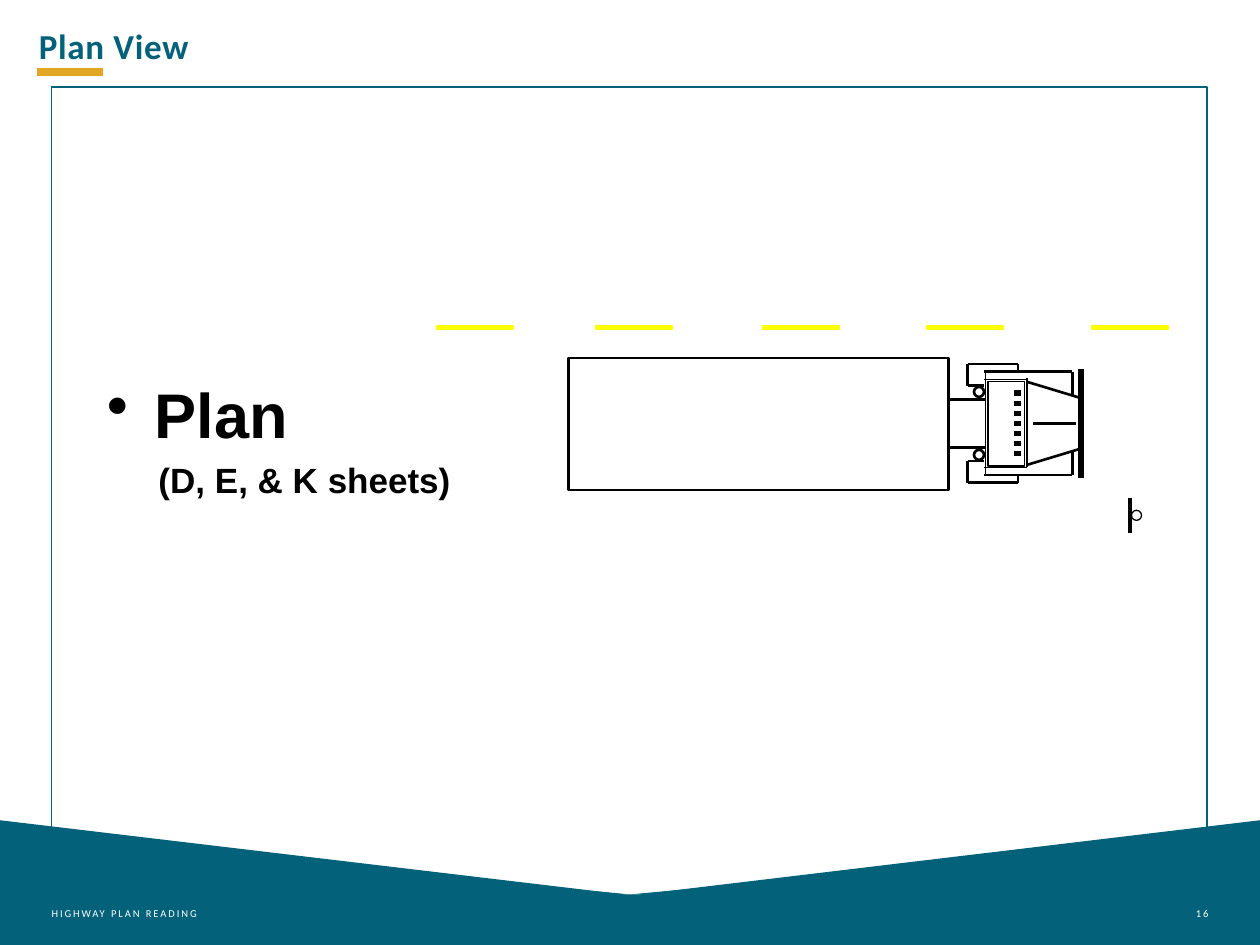
"""Builds the Plan View slide: a truck seen from above on a marked lane."""
from lxml.etree import SubElement
from pptx import Presentation
from pptx.dml.color import RGBColor as Rgb
from pptx.enum.shapes import MSO_CONNECTOR as Conn, MSO_SHAPE as Shape
from pptx.enum.text import MSO_ANCHOR as Anchor, PP_ALIGN as Align
from pptx.oxml.ns import qn
from pptx.util import Inches, Pt

THEME = {
    "teal": Rgb.from_string("03617A"), "gold": Rgb.from_string("E0A624"),
    "lane": Rgb.from_string("FFFF00"), "ink": Rgb.from_string("000000"),
    "white": Rgb.from_string("FFFFFF"),
    "foot": {"name": "Calibri", "size": Pt(6)},
    "title": {"name": "Calibri", "size": Pt(20), "bold": True},
    "note": {"name": "Arial", "size": Pt(20), "bold": True},
    "point": {"name": "Arial", "size": Pt(36), "bold": True},
}
FLUSH = {"margin_left": 0, "margin_right": 0, "vertical_anchor": Anchor.BOTTOM}
TEXTS = [
    {"text": "HIGHWAY PLAN READING", "at": (0.41, 6.95, 2.67, 0.4), "font": "foot",
     "color": "white", "gap": 110, "frame": FLUSH},
    {"text": "16", "at": (8.62, 6.95, 0.97, 0.4), "font": "foot", "color": "white",
     "gap": 110, "frame": FLUSH, "para": {"alignment": Align.RIGHT}},
    {"text": "Plan View", "at": (0.21, 0.11, 7.54, 0.47), "font": "title",
     "color": "teal", "gap": 40, "frame": {"vertical_anchor": Anchor.BOTTOM},
     "para": {"line_spacing": 0.9}},
    {"text": "(D, E, & K sheets)", "at": (1.16, 3.59, 2.54, 0.44), "font": "note",
     "color": "ink", "frame": {"word_wrap": False}},
    {"text": "Plan", "at": (0.75, 2.93, 8.5, 0.7), "font": "point", "color": "ink",
     "bullet": "•"},
]
BANDS = [
    [(10, 6.51), (10, 7.5), (0, 7.5), (0, 6.51), (4.96, 7.1), (5.07, 7.1)],
    [(0, 7.11), (5.01, 7.1), (0, 6.65)],
    [(10, 7.11), (4.99, 7.1), (10, 6.65)],
]
AXIS = 3.36
HALF = [
    (7.81, 3.01, 8.15, 3.01, 0.75), (8.15, 3.03, 8.58, 3.16, 1.5),
    (7.81, 2.95, 8.51, 2.95, 1.5), (8.51, 2.95, 8.51, 3.14, 1.5),
    (8.58, AXIS, 8.58, 2.93, 3), (7.68, 2.89, 8.08, 2.89, 1.5),
    (7.68, 2.89, 7.68, 3.06, 1.5), (7.68, 3.06, 7.81, 3.06, 1.5),
    (8.08, 2.89, 8.08, 2.94, 1.5), (7.82, 3.17, 7.53, 3.17, 1.5),
]
SPINE = [
    (7.82, 2.94, 7.82, 3.77, 0.75), (8.15, 3, 8.15, 3.71, 0.75),
    (8.57, 3.16, 8.57, 3.56, 0.75), (8.2, AXIS, 8.54, AXIS, 1.5),
]
VENTS, PITCH = 7, 0.08
BODY = [
    (Shape.RECTANGLE, (4.51, 2.84, 3.02, 1.05), 1.5),
    (Shape.RECTANGLE, (7.84, 3.03, 0.29, 0.67), 0.75),
    (Shape.OVAL, (7.73, 3.07, 0.08, 0.08), 1.5),
    (Shape.OVAL, (7.73, 3.57, 0.08, 0.08), 1.5),
]
DASHES, DASH, LANE = (3.46, 4.72, 6.05, 7.35, 8.66), 0.62, 2.6


def apply(item, props):
    """Set each attribute named in props."""
    for key, val in props.items():
        setattr(item, key, val)


def stroke(pool, x1, y1, x2, y2, width, color="ink"):
    """Draw a straight line."""
    line = pool.add_connector(Conn.STRAIGHT, *map(Inches, (x1, y1, x2, y2)))
    line.line.color.rgb = THEME[color]
    line.line.width = Pt(width)
    SubElement(line._element.spPr, qn("a:effectLst"))


def outline(pool, kind, box, width, color="ink"):
    """Draw an unfilled shape."""
    shape = pool.add_shape(kind, *map(Inches, box))
    shape.shadow.inherit = False
    shape.fill.background()
    shape.line.color.rgb = THEME[color]
    shape.line.width = Pt(width)


def band(pool, points):
    """Draw a filled footer polygon."""
    path = [(Inches(x), Inches(y)) for x, y in points]
    pen = pool.build_freeform(*path[0])
    pen.add_line_segments(path[1:], close=True)
    shape = pen.convert_to_shape()
    shape.shadow.inherit = False
    shape.fill.solid()
    shape.fill.fore_color.rgb = THEME["teal"]
    shape.line.fill.background()


def write(pool, item):
    """Add one text box."""
    frame = pool.add_textbox(*map(Inches, item["at"])).text_frame
    apply(frame, {"word_wrap": True, **item.get("frame", {})})
    para = frame.paragraphs[0]
    apply(para, item.get("para", {}))
    if "bullet" in item:
        props = para._p.get_or_add_pPr()
        props.set("marL", str(Inches(0.38)))
        props.set("indent", str(Inches(-0.38)))
        SubElement(props, qn("a:buChar"), char=item["bullet"])
    run = para.add_run()
    run.text = item["text"]
    apply(run.font, THEME[item["font"]])
    run.font.color.rgb = THEME[item["color"]]
    if "gap" in item:
        run._r.get_or_add_rPr().set("spc", str(item["gap"]))


def truck(pool):
    """Draw the truck, mirrored about its long axis."""
    for kind, box, width in BODY:
        outline(pool, kind, box, width)
    for x1, y1, x2, y2, width in HALF:
        stroke(pool, x1, y1, x2, y2, width)
        stroke(pool, x1, 2 * AXIS - y1, x2, 2 * AXIS - y2, width)
    for part in SPINE:
        stroke(pool, *part)
    for i in range(VENTS):
        y = AXIS + (i - VENTS // 2) * PITCH
        stroke(pool, 8.1, y, 8.05, y, 3)


def main():
    """Assemble and save the slide."""
    deck = Presentation()
    deck.slide_width, deck.slide_height = Inches(10), Inches(7.5)
    pool = deck.slides.add_slide(deck.slide_layouts[6]).shapes
    outline(pool, Shape.RECTANGLE, (0.41, 0.69, 9.17, 6.66), 1, "teal")
    for points in BANDS:
        band(pool, points)
    stroke(pool, 0.29, 0.57, 0.82, 0.57, 4.5, "gold")
    truck(pool.add_group_shape().shapes)
    for x in DASHES:
        stroke(pool, x, LANE, x + DASH, LANE, 3, "lane")
    stroke(pool, 8.97, 4.23, 8.97, 3.95, 2.25)
    outline(pool, Shape.OVAL, (8.98, 4.05, 0.08, 0.08), 0.75)
    for item in TEXTS:
        write(pool, item)
    deck.save("out.pptx")


if __name__ == "__main__":
    main()
